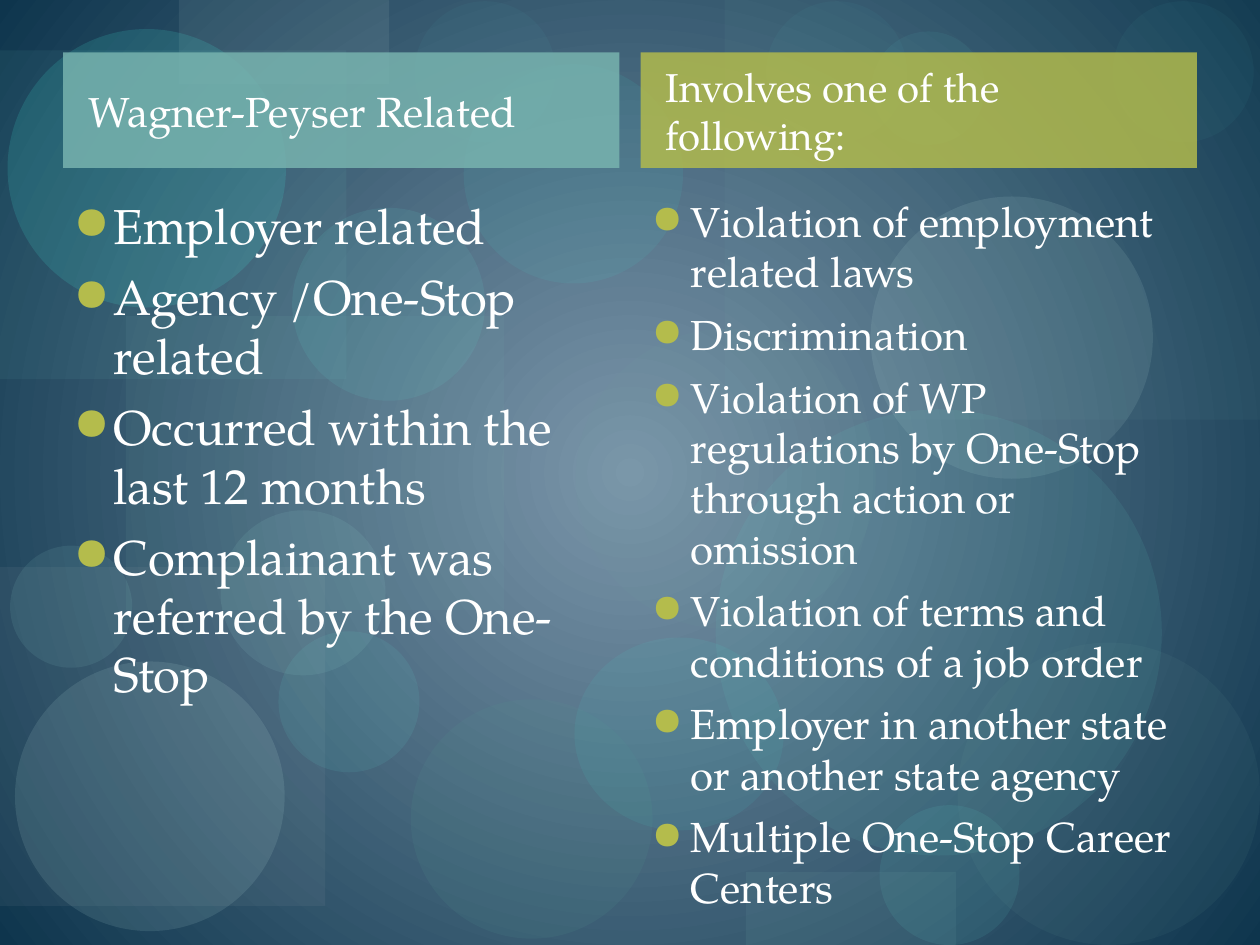
from lxml.etree import SubElement
from pptx import Presentation
from pptx.dml.color import RGBColor
from pptx.enum.shapes import MSO_SHAPE as SHAPE
from pptx.enum.text import MSO_ANCHOR as ANCHOR, MSO_AUTO_SIZE as AUTO_SIZE, PP_ALIGN as ALIGN
from pptx.oxml.ns import qn
from pptx.util import Pt

FONT = "TeX Gyre Pagella"
WHITE = RGBColor(0xFF, 0xFF, 0xFF)
SKY = RGBColor(0x7B, 0x96, 0xAA)
NAVY = RGBColor(0x0E, 0x35, 0x4D)
TEAL = RGBColor(0x79, 0xB5, 0xB0)
OLIVE = RGBColor(0xB4, 0xBC, 0x4C)
DEEP = RGBColor(0x54, 0x97, 0x91)
GREY = RGBColor(0xB2, 0xB7, 0xBA)
SAGE = RGBColor(0x70, 0xA3, 0x9E)
AQUA = RGBColor(0x65, 0xE8, 0xDC)
PALE = RGBColor(0xC1, 0xE8, 0xE4)
BRIGHT = RGBColor(0x44, 0xEA, 0xDC)
MINT = RGBColor(0x77, 0xD6, 0xCE)
MIST = RGBColor(0xBE, 0xD7, 0xD4)
FOAM = RGBColor(0x97, 0xDC, 0xD6)
LAGOON = RGBColor(0x61, 0xCD, 0xC4)
BOX, DOT = SHAPE.RECTANGLE, SHAPE.OVAL

DECOR = [
    (BOX, 72, 180.7, 216, 167.8, TEAL, 9),
    (DOT, 234.7, 399.6, 138.2, 136.8, DEEP, 13),
    (BOX, 414, 0, 306, 239.8, TEAL, 6),
    (BOX, 0, 324, 185.8, 193.7, GREY, 8),
    (DOT, 329, 187.9, 171.4, 171.4, SAGE, 8),
    (DOT, 502.6, 460.1, 79.9, 79.9, AQUA, 9),
    (DOT, 497.5, 112.3, 161.3, 161.3, PALE, 11),
    (DOT, 8.6, 378, 154.1, 154.1, PALE, 12),
    (DOT, 159.1, 360.7, 80.6, 80.6, AQUA, 9),
    (DOT, 328.3, 364.3, 119.5, 110.2, BRIGHT, 8),
    (BOX, 0, 28.8, 198, 187.9, MINT, 7),
    (BOX, 102.2, 0, 120.2, 48.2, MIST, 10),
    (DOT, 4.3, 16.6, 159.1, 159.1, BRIGHT, 15),
    (DOT, 5.8, 311.8, 69.8, 69.8, FOAM, 10),
    (DOT, 167, 118.8, 110.2, 110.2, AQUA, 9),
    (DOT, 265, 36.7, 125.3, 125.3, BRIGHT, 8),
    (DOT, 409, 234, 254.9, 254.9, LAGOON, 10),
    (DOT, 437.8, 0.7, 80.6, 80.6, AQUA, 4),
    (DOT, 547.2, 367.2, 172.8, 172.8, SAGE, 8),
    (DOT, 126, 291.6, 94.3, 94.3, FOAM, 10),
    (DOT, 498.2, 18, 64.8, 64.8, AQUA, 6),
    (DOT, 635.8, 0.7, 80.6, 80.6, AQUA, 4),
    (BOX, 426.2, 498.2, 120.2, 41.8, TEAL, 10),
    (DOT, 236.9, 0.7, 80.6, 80.6, AQUA, 4),
]
RELATED = [
    "Employer related",
    "Agency /One-Stop related",
    "Occurred within the last 12 months",
    "Complainant was referred by the One-Stop",
]
INVOLVES = [
    "Violation of employment related laws",
    "Discrimination",
    "Violation of WP regulations by One-Stop through action or omission",
    "Violation of terms and conditions of a job order",
    "Employer in another state or another state agency",
    "Multiple One-Stop Career Centers",
]


def set_background(s):
    """Fill the slide with a radial gradient from its centre."""
    fill = s.background.fill
    fill.gradient()
    for stop, color in zip(fill.gradient_stops, (SKY, NAVY)):
        stop.color.rgb = color
    grad = next(s.element.iter(qn("a:gradFill")))
    grad.remove(grad.find(qn("a:lin")))
    radial = SubElement(grad, qn("a:path"), path="circle")
    SubElement(radial, qn("a:fillToRect"), {side: "50000" for side in "ltrb"})


def fill_shape(sp, color, opacity):
    """Give a shape a translucent fill, with opacity in percent."""
    sp.fill.solid()
    sp.fill.fore_color.rgb = color
    clr = next(sp.element.spPr.iter(qn("a:srgbClr")))
    SubElement(clr, qn("a:alpha"), val=str(opacity * 1000))


def add_decor(s, kind, x, y, w, h, color, opacity):
    """Add one translucent background shape."""
    sp = s.shapes.add_shape(kind, Pt(x), Pt(y), Pt(w), Pt(h))
    sp.shadow.inherit = False
    sp.line.fill.background()
    fill_shape(sp, color, opacity)


def place(s, idx, x, y, h):
    """Move a placeholder to its column and bring it to the front."""
    sp = s.placeholders[idx]
    sp.left, sp.top, sp.width, sp.height = Pt(x), Pt(y), Pt(318), Pt(h)
    s.shapes.element.append(sp.element)
    tf = sp.text_frame
    tf.word_wrap = True
    tf.auto_size = AUTO_SIZE.NONE
    return sp, tf


def add_run(p, text, size, before):
    """Write one formatted run and set the spacing of its paragraph."""
    p.alignment = ALIGN.LEFT
    p.space_before = Pt(before)
    r = p.add_run()
    r.text = text
    r.font.name, r.font.size, r.font.bold = FONT, Pt(size), False
    r.font.color.rgb = WHITE


def set_bullet(p):
    """Give a paragraph a round olive bullet and a hanging indent."""
    pPr = p._p.get_or_add_pPr()
    pPr.set("marL", str(Pt(21.6)))
    pPr.set("indent", str(Pt(-21.6)))
    clr = SubElement(pPr, qn("a:buClr"))
    SubElement(clr, qn("a:srgbClr"), val=str(OLIVE))
    SubElement(pPr, qn("a:buSzPct"), val="85000")
    SubElement(pPr, qn("a:buFont"), typeface=FONT)
    SubElement(pPr, qn("a:buChar"), char="●")


def add_heading(s, idx, x, text, size, color):
    """Fill a heading placeholder as a coloured band."""
    sp, tf = place(s, idx, x, 30, 66)
    fill_shape(sp, color, 83)
    tf.vertical_anchor = ANCHOR.MIDDLE
    tf.margin_left = Pt(14.4)
    tf.margin_top = tf.margin_right = tf.margin_bottom = Pt(7.2)
    add_run(tf.paragraphs[0], text, size, 0)


def add_list(s, idx, x, h, items, size):
    """Fill a content placeholder with bulleted items."""
    sp, tf = place(s, idx, x, 108, h)
    tf.vertical_anchor = ANCHOR.TOP
    for i, item in enumerate(items):
        p = tf.add_paragraph() if i else tf.paragraphs[0]
        add_run(p, item, size, 7)
        set_bullet(p)


def main():
    """Build and save the slide."""
    prs = Presentation()
    prs.slide_width, prs.slide_height = Pt(720), Pt(540)
    s = prs.slides.add_slide(prs.slide_layouts[4])
    title = s.shapes.title.element
    title.getparent().remove(title)
    set_background(s)
    for decor in DECOR:
        add_decor(s, *decor)
    add_heading(s, 1, 36, "Wagner-Peyser Related", 24, TEAL)
    add_list(s, 2, 36, 375, RELATED, 28)
    add_list(s, 4, 366, 432, INVOLVES, 24)
    add_heading(s, 3, 366, "Involves one of the following:", 23, OLIVE)
    prs.save("out.pptx")


if __name__ == "__main__":
    main()
